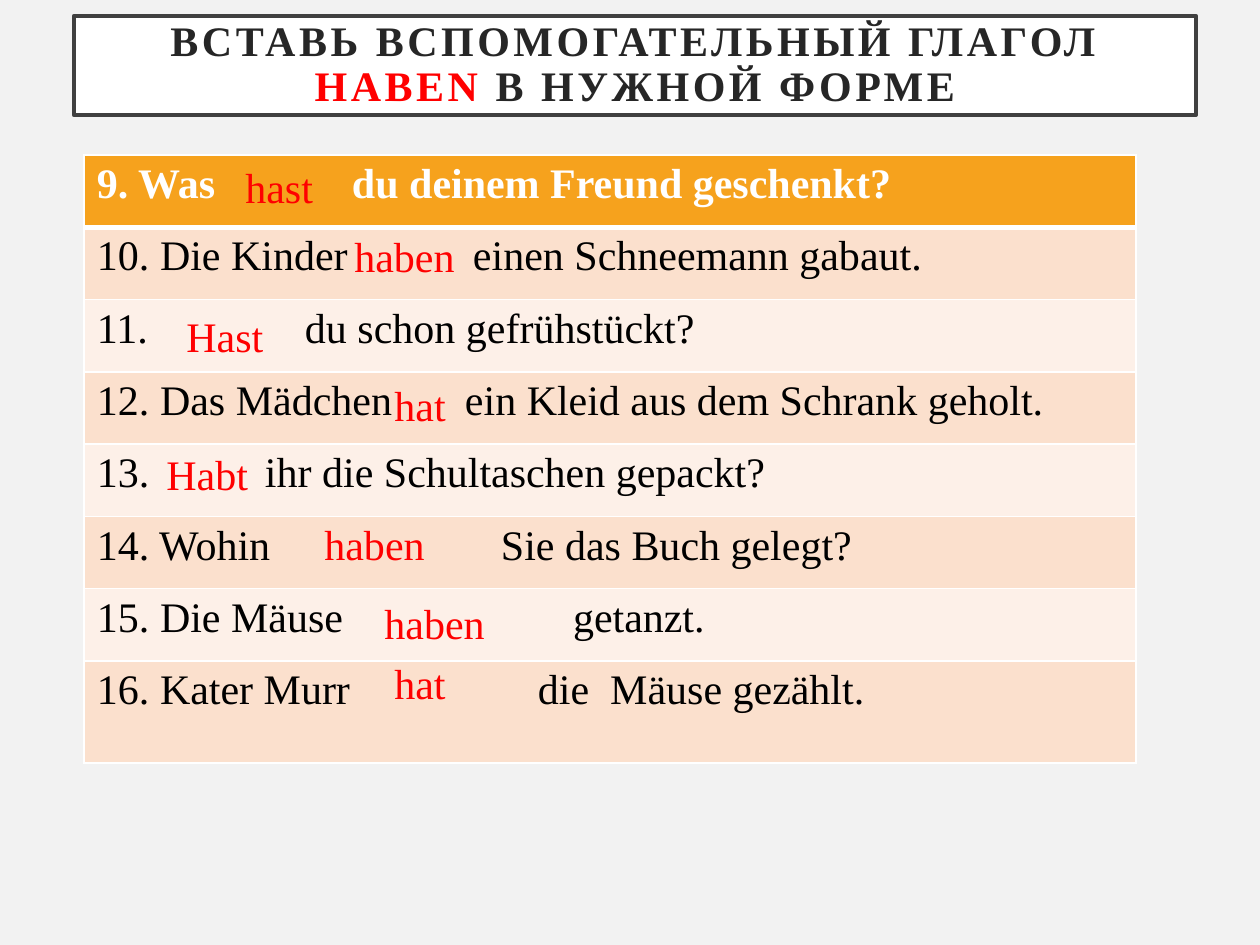
from lxml import etree
from pptx import Presentation
from pptx.dml.color import RGBColor
from pptx.enum import shapes, text
from pptx.oxml.ns import qn
from pptx.util import Emu, Pt

SCALE = 914400 / 126  # EMU in one px
FONT = "Times New Roman"
COLORS = {
    "background": "F2F2F2", "white": "FFFFFF", "frame": "404040",
    "title": "262626", "answer": "FF0000", "black": "000000",
    "header": "F6A21D", "band_dark": "FBE0CD", "band_light": "FDF0E8",
}

# Text before the gap, text after it, and where the second part starts
SENTENCES = [
    ("9. Was", "du deinem Freund geschenkt?", 352),
    ("10. Die Kinder", "einen Schneemann gabaut.", 473),
    ("11.", "du schon gefrühstückt?", 305),
    ("12. Das Mädchen", "ein Kleid aus dem Schrank geholt.", 465),
    ("13.", "ihr die Schultaschen gepackt?", 265),
    ("14. Wohin", "Sie das Buch gelegt?", 501),
    ("15. Die Mäuse", "getanzt.", 573),
    ("16. Kater Murr", "die  Mäuse gezählt.", 538),
]
# Word, left, top, width
ANSWERS = [
    ("hast", 233, 155, 100), ("haben", 342, 224, 129),
    ("Hast", 174, 304, 139), ("hat", 382, 373, 110),
    ("Habt", 154, 442, 110), ("haben", 312, 512, 149),
    ("haben", 372, 591, 169), ("hat", 382, 651, 139),
]
TABLE_LEFT, TABLE_TOP, TABLE_WIDTH = 84, 155, 1052
CELL_MARGIN = 13


def px(length):
    return Emu(round(length * SCALE))


def rgb(name):
    return RGBColor.from_string(COLORS[name])


def add_text(paragraph, words, color="black", bold=False, spacing=None):
    run = paragraph.add_run()
    run.text = words
    run.font.name = FONT
    run.font.size = Pt(24)
    run.font.bold = bold
    run.font.color.rgb = rgb(color)
    if spacing:
        run._r.get_or_add_rPr().set("spc", str(spacing * 100))


def add_title(slide):
    shape = slide.shapes.add_shape(
        shapes.MSO_SHAPE.RECTANGLE, px(74), px(16), px(1122), px(99))
    shape.shadow.inherit = False
    shape.fill.solid()
    shape.fill.fore_color.rgb = rgb("white")
    shape.line.color.rgb = rgb("frame")
    shape.line.width = Pt(2.5)
    frame = shape.text_frame
    frame.word_wrap = True
    frame.vertical_anchor = text.MSO_ANCHOR.MIDDLE
    frame.margin_left = frame.margin_right = px(25)
    frame.margin_top = frame.margin_bottom = 0
    paragraph = frame.paragraphs[0]
    paragraph.alignment = text.PP_ALIGN.CENTER
    paragraph.line_spacing = 0.9
    for words, color in [("ВСТАВЬ ВСПОМОГАТЕЛЬНЫЙ ГЛАГОЛ ", "title"),
                         ("HABEN ", "answer"), ("В НУЖНОЙ ФОРМЕ", "title")]:
        add_text(paragraph, words, color=color, bold=True, spacing=2)


def add_tab_stop(paragraph, position):
    tabs = etree.SubElement(paragraph._p.get_or_add_pPr(), qn("a:tabLst"))
    etree.SubElement(tabs, qn("a:tab"), pos=str(position), algn="l")


def set_borders(cell, **widths):
    properties = cell._tc.get_or_add_tcPr()
    for index, side in enumerate(("L", "R", "T", "B")):
        line = etree.Element(qn(f"a:ln{side}"), w=str(Pt(widths.get(side, 1))))
        fill = etree.SubElement(line, qn("a:solidFill"))
        etree.SubElement(fill, qn("a:srgbClr"), val=COLORS["white"])
        properties.insert(index, line)


def add_sentence_table(slide):
    table = slide.shapes.add_table(
        len(SENTENCES), 1, px(TABLE_LEFT), px(TABLE_TOP),
        px(TABLE_WIDTH), px(608)).table
    for index, (before, after, start) in enumerate(SENTENCES):
        is_header = index == 0
        is_last = index == len(SENTENCES) - 1
        table.rows[index].height = px(102) if is_last else px(506 / 7)
        cell = table.cell(index, 0)
        cell.margin_left = px(CELL_MARGIN)
        cell.fill.solid()
        band = "band_dark" if index % 2 else "band_light"
        cell.fill.fore_color.rgb = rgb("header" if is_header else band)
        set_borders(cell, B=3 if is_header else 1, T=3 if index == 1 else 1)
        paragraph = cell.text_frame.paragraphs[0]
        add_tab_stop(paragraph, px(start - TABLE_LEFT - CELL_MARGIN))
        add_text(paragraph, f"{before}\t{after}", bold=is_header,
                 color="white" if is_header else "black")


def add_answer(slide, word, left, top, width):
    box = slide.shapes.add_textbox(px(left), px(top), px(width), px(63))
    box.text_frame.word_wrap = True
    add_text(box.text_frame.paragraphs[0], word, color="answer")


def main():
    presentation = Presentation()
    presentation.slide_width = px(1260)
    presentation.slide_height = px(945)
    slide = presentation.slides.add_slide(presentation.slide_layouts[6])
    slide.background.fill.solid()
    slide.background.fill.fore_color.rgb = rgb("background")

    # Heading and exercise
    add_title(slide)
    add_sentence_table(slide)

    # Verb forms laid over the gaps
    for answer in ANSWERS:
        add_answer(slide, *answer)

    presentation.save("out.pptx")


if __name__ == "__main__":
    main()
